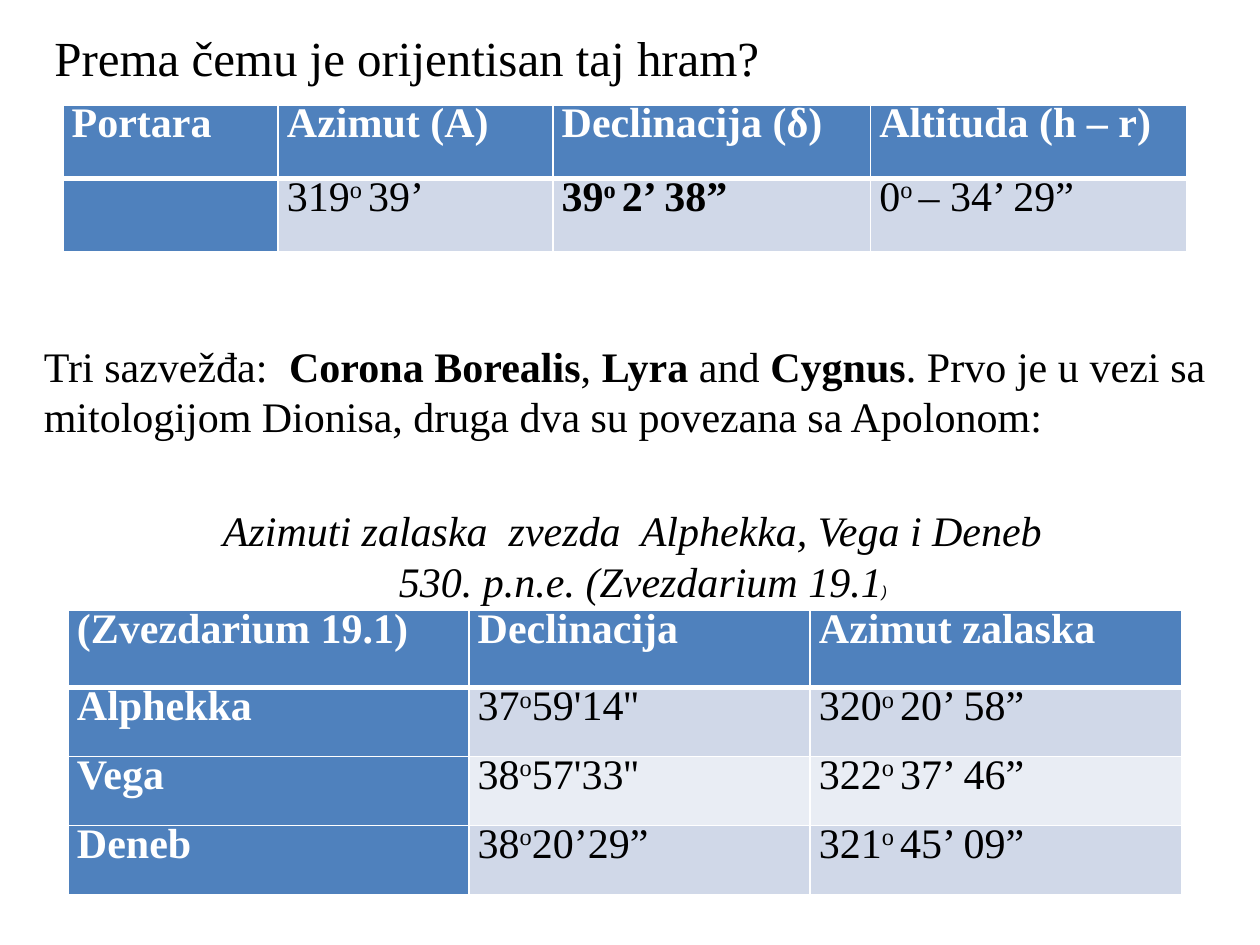
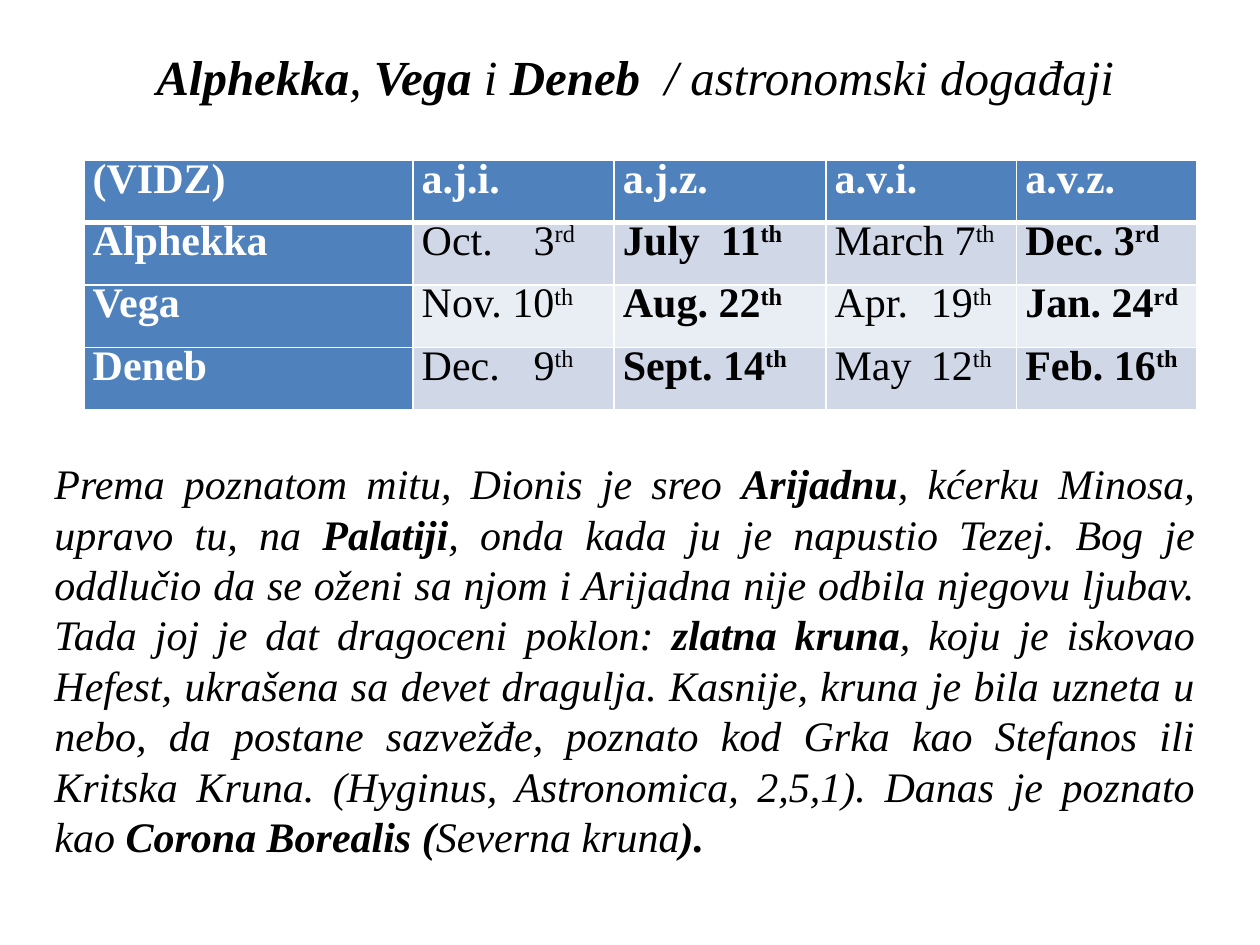
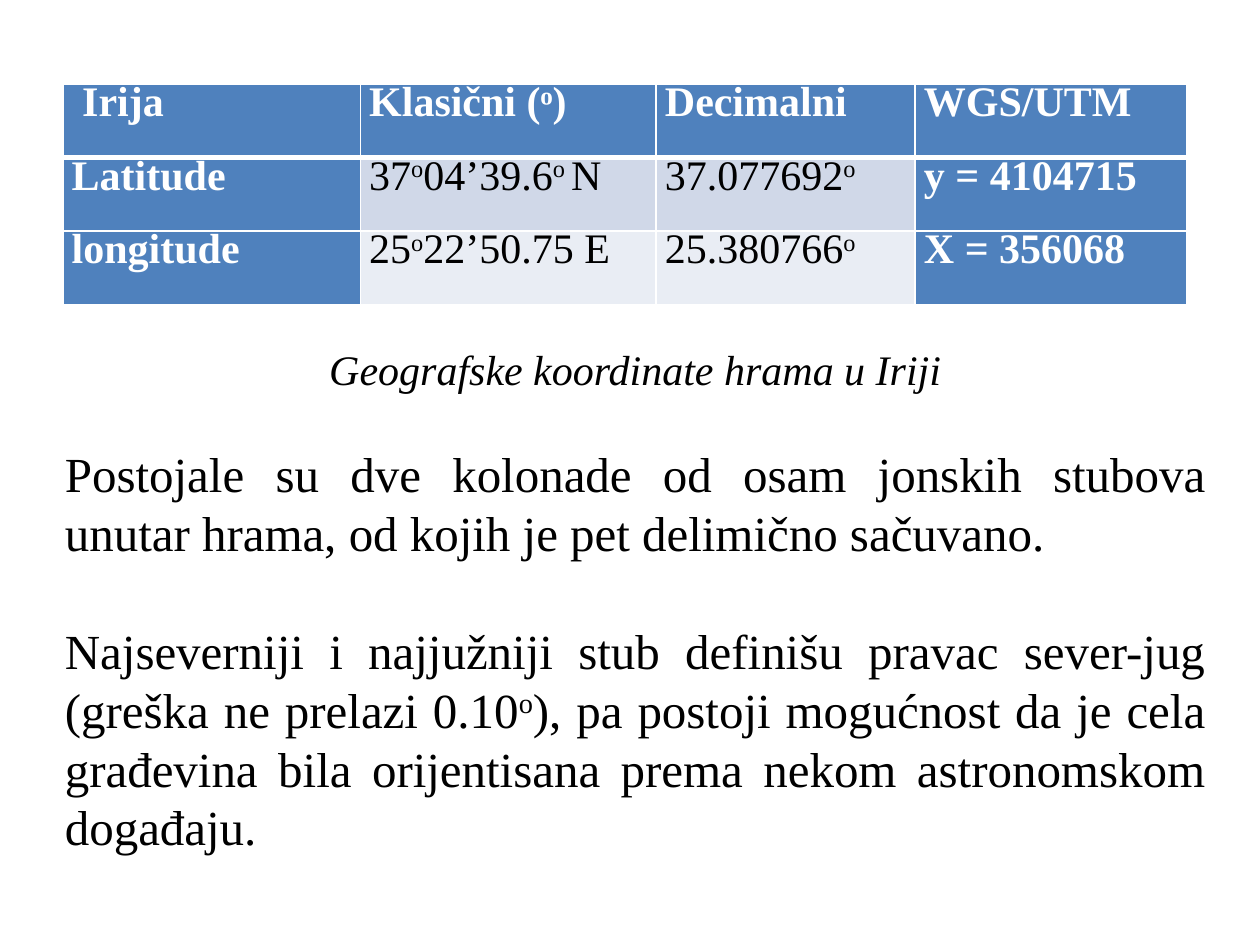
from lxml.etree import SubElement as Sub
from pptx import Presentation
from pptx.dml.color import RGBColor as Rgb
from pptx.enum.text import MSO_ANCHOR as Anchor, PP_ALIGN as Align
from pptx.oxml.ns import qn
from pptx.util import Pt

HUES = {"ink": "000000", "paper": "FFFFFF", "head": "4F81BD",
        "odd": "D0D8E8", "even": "E9EDF4"}
SERIF, SANS = "Times New Roman", "Arial"
BODY, LARGE = 24, 28
GAP = {BODY: 28.8, LARGE: 33.6}  # height of one line at each size


class Deck:
    def __init__(self):
        self.prs = Presentation()
        self.prs.slide_width, self.prs.slide_height = Pt(720), Pt(540)
        self.slide = None

    def page(self):
        self.slide = self.prs.slides.add_slide(self.prs.slide_layouts[6])

    def run(self, par, text, size=BODY, hue="ink", bold=False, ital=False,
            face=SERIF, sup=False):
        run = par.add_run()
        run.text = text
        font = run.font
        font.name, font.size = face, Pt(size)
        font.bold, font.italic = bold, ital
        font.color.rgb = Rgb.from_string(HUES[hue])
        if sup:
            run._r.get_or_add_rPr().set("baseline", "30000")

    def runs(self, par, text, bold=False, **style):
        """Add runs: *...* is bold, ^...^ is superscript."""
        for i, part in enumerate(text.split("*")):
            for j, bit in enumerate(part.split("^")):
                if bit:
                    self.run(par, bit, bold=bold or i % 2 == 1,
                             sup=j % 2 == 1, **style)

    def text(self, box, pars, anchor=Anchor.TOP, wrap=True, top=3.6):
        """Add a text box; pars holds (text, align, space before, style)."""
        frame = self.slide.shapes.add_textbox(*map(Pt, box)).text_frame
        frame.word_wrap, frame.vertical_anchor = wrap, anchor
        frame.margin_top = Pt(top)
        for i, (text, align, space, style) in enumerate(pars):
            par = frame.add_paragraph() if i else frame.paragraphs[0]
            par.alignment, par.space_before = align, Pt(space)
            self.runs(par, text, **style)
        return par

    def edge(self, cell, row):
        """Draw white cell borders, thick under the header row."""
        props = cell._tc.get_or_add_tcPr()
        for side in "LRTB":
            thick = (row, side) in ((0, "B"), (1, "T"))
            line = Sub(props, qn(f"a:ln{side}"), w=str(Pt(3 if thick else 1)))
            fill = Sub(line, qn("a:solidFill"))
            Sub(fill, qn("a:srgbClr"), val=HUES["paper"])

    def cell(self, cell, text, row, head, tab):
        self.edge(cell, row)
        cell.fill.solid()
        hue = "head" if head else "odd" if row % 2 else "even"
        cell.fill.fore_color.rgb = Rgb.from_string(HUES[hue])
        cell.margin_left = cell.margin_right = Pt(5)
        cell.margin_top, cell.margin_bottom = Pt(12), Pt(0)
        par = cell.text_frame.paragraphs[0]
        par.alignment, par.line_spacing = Align.JUSTIFY, Pt(12)
        if "\t" in text:
            stops = Sub(par._p.get_or_add_pPr(), qn("a:tabLst"))
            Sub(stops, qn("a:tab"), pos=str(Pt(tab)), algn="l")
        self.runs(par, text, bold=head, hue="paper" if head else "ink")

    def table(self, left, top, cols, rows, data, heads=(0,), tabs=None):
        """Add a table; heads lists the columns styled like the header."""
        size = left, top, sum(cols), sum(rows)
        grid = self.slide.shapes.add_table(
            len(rows), len(cols), *map(Pt, size)).table
        for col, width in zip(grid.columns, cols):
            col.width = Pt(width)
        for row, height in zip(grid.rows, rows):
            row.height = Pt(height)
        for r, line in enumerate(data):
            for c, text in enumerate(line):
                self.cell(grid.cell(r, c), text, r, r == 0 or c in heads,
                          (tabs or {}).get(c))


def portara(deck):
    deck.page()
    deck.text((24, 12, 546, 75), [
        ("Prema čemu je orijentisan taj hram?", Align.LEFT, 0,
         {"size": LARGE})])
    deck.table(36, 60, (123, 157, 181.5, 180.5), [42] * 2, [
        ("Portara", "Azimut (A)", "Declinacija (δ)", "Altituda (h – r)"),
        ("", "319^o ^39’", "*39^o ^2’ 38”*", "0^o ^– 34’ 29”")])
    deck.table(39, 349, (229, 195, 212.5), [44] + [39.4] * 3, [
        ("(Zvezdarium 19.1)", "Declinacija", "Azimut zalaska"),
        ("Alphekka", "37^o^59'14''", "320^o ^20’ 58”"),
        ("Vega", "38^o^57'33''", "322^o ^37’ 46”"),
        ("Deneb", "38^o^20’29”", "321^o ^45’ 09”")])
    ital = {"ital": True}
    last = deck.text((118, 197, 493, 152.5), [
        ("Azimuti zalaska  zvezda  Alphekka, Vega i Deneb ",
         Align.CENTER, 0, ital),
        (" 530. p.n.e. (Zvezdarium 19.1", Align.CENTER, 0, ital)],
        Anchor.BOTTOM, wrap=False)
    deck.run(last, ")", size=9, face=SANS, ital=True)
    deck.text((18, 162, 678, 94), [
        ("Tri sazvežđa:  *Corona Borealis*, *Lyra* and *Cygnus*. Prvo je u "
         "vezi sa mitologijom Dionisa, druga dva su povezana sa Apolonom:",
         Align.JUSTIFY, 0, {})], top=3.6 + GAP[BODY])


def stars(deck):
    deck.page()
    deck.text((74, 23, 571, 41), [
        (" *Alphekka*, *Vega *i *Deneb*  / astronomski događaji",
         Align.CENTER, 0, {"size": LARGE, "ital": True})],
        Anchor.MIDDLE, wrap=False)
    deck.table(48, 91.5, (188, 115, 121, 109, 103), [35.7] * 4, [
        ("(VIDZ)", "a.j.i.", "a.j.z.", "a.v.i.", "a.v.z."),
        ("Alphekka", "Oct.\t3^rd^", "*July\t11^th^*", "March 7^th^",
         "*Dec. 3^rd^*"),
        ("Vega", "Nov. 10^th^", "*Aug. 22^th^*", "Apr.\t19^th^",
         "*Jan. 24^rd^*"),
        ("Deneb", "Dec.\t9^th^", "*Sept. 14^th^*", "May\t12^th^",
         "*Feb. 16^th^*")], tabs={1: 64, 2: 56, 3: 55})
    deck.text((24, 258, 666, 262), [
        ("Prema poznatom mitu, Dionis je sreo *Arijadnu*, kćerku Minosa, "
         "upravo tu, na *Palatiji*, onda kada ju je napustio Tezej. Bog je "
         "oddlučio da se oženi sa njom i Arijadna nije odbila njegovu "
         "ljubav. Tada joj je dat dragoceni poklon: *zlatna kruna*, koju je "
         "iskovao Hefest, ukrašena sa devet dragulja. Kasnije, kruna je bila "
         "uzneta u nebo, da postane sazvežđe, poznato kod Grka kao Stefanos "
         "ili Kritska Kruna. (Hyginus, Astronomica, 2,5,1). Danas je poznato "
         "kao *Corona Borealis (*Severna kruna*).*",
         Align.JUSTIFY, 0, {"ital": True})])


def irija(deck):
    deck.page()
    deck.table(36, 48, (170, 169, 148, 155), [42] * 3, [
        (" Irija", "Klasični (ᵒ)", "Decimalni", "WGS/UTM"),
        ("Latitude", "37^o^04’39.6^o ^N", "37.077692^o^", "y = 4104715"),
        ("longitude", "25^o^22’50.75 E", "25.380766^o^", "X = 356068")],
        heads=(0, 3))
    large = {"size": LARGE}
    deck.text((30, 191, 666, 303), [
        ("Geografske koordinate hrama u Iriji", Align.CENTER, 0,
         {"ital": True}),
        ("Postojale su dve kolonade od osam jonskih stubova unutar hrama, "
         "od kojih je pet delimično sačuvano.",
         Align.JUSTIFY, GAP[BODY], large),
        ("Najseverniji i najjužniji stub definišu pravac sever-jug (greška "
         "ne prelazi 0.10^o^), pa postoji mogućnost da je cela građevina "
         "bila orijentisana prema nekom astronomskom događaju.",
         Align.JUSTIFY, GAP[LARGE], large)], Anchor.MIDDLE)


def main():
    deck = Deck()
    for build in (portara, stars, irija):
        build(deck)
    deck.prs.save("out.pptx")


if __name__ == "__main__":
    main()
